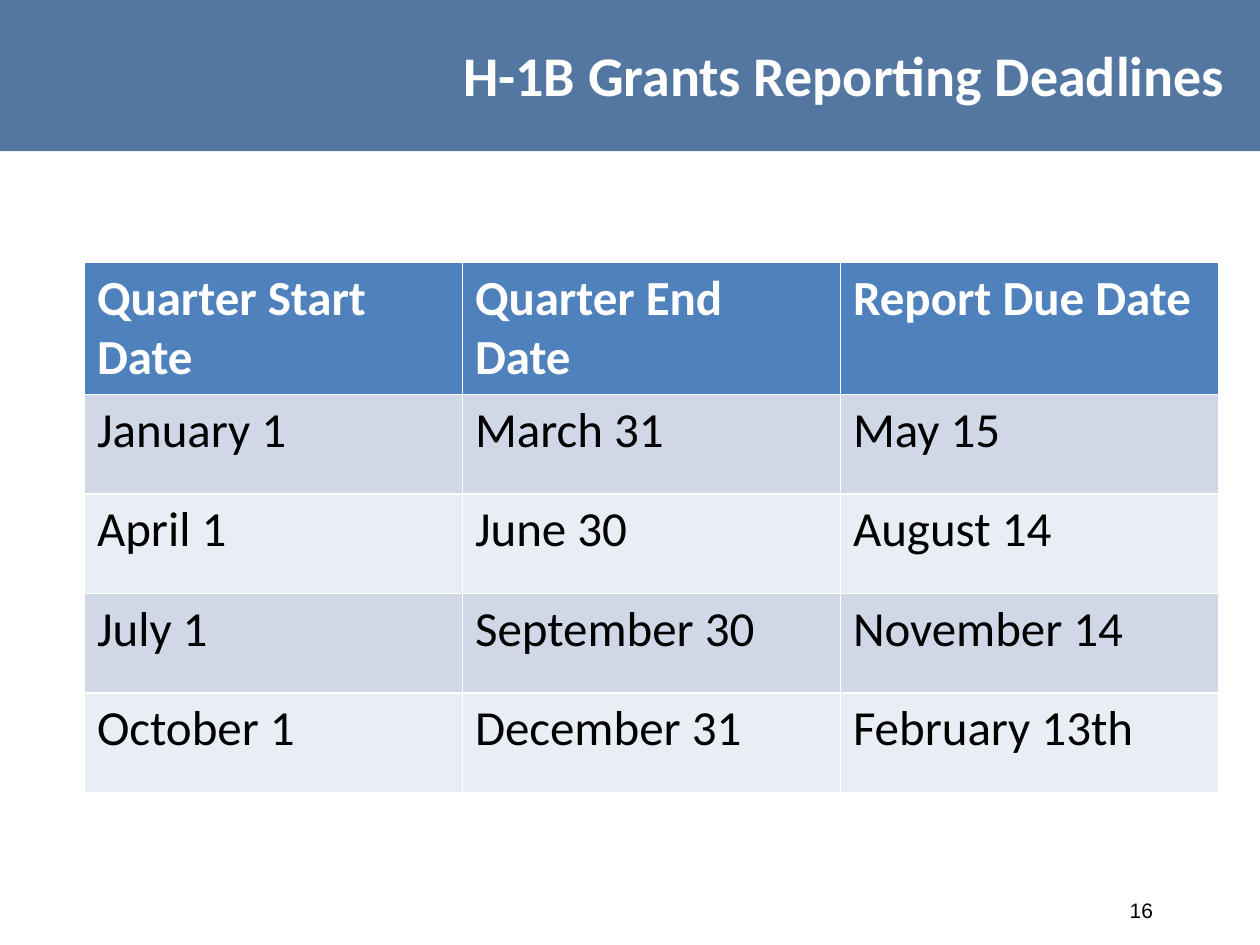
from typing import NamedTuple

from lxml.etree import SubElement
from pptx import Presentation
from pptx.dml.color import RGBColor
from pptx.enum.shapes import MSO_SHAPE
from pptx.enum.text import MSO_ANCHOR, MSO_AUTO_SIZE, PP_ALIGN
from pptx.oxml.ns import qn
from pptx.slide import Slide
from pptx.text.text import TextFrame
from pptx.util import Inches, Pt

WHITE = RGBColor(0xFF, 0xFF, 0xFF)
BLACK = RGBColor(0x00, 0x00, 0x00)
BAND_BLUE = RGBColor(0x37, 0x60, 0x92)
HEADER_BLUE = RGBColor(0x4F, 0x81, 0xBD)
ROW_DARK = RGBColor(0xD0, 0xD8, 0xE8)
ROW_LIGHT = RGBColor(0xE9, 0xED, 0xF4)


class Quarter(NamedTuple):
    start: str
    end: str
    due: str


class TextStyle(NamedTuple):
    size: int
    color: RGBColor
    bold: bool = False
    font: str = "Calibri"
    alignment: PP_ALIGN = PP_ALIGN.LEFT


TITLE_STYLE = TextStyle(32, WHITE, bold=True, alignment=PP_ALIGN.CENTER)
HEADER_STYLE = TextStyle(28, WHITE, bold=True)
BODY_STYLE = TextStyle(28, BLACK)
NUMBER_STYLE = TextStyle(12, BLACK, font="Arial", alignment=PP_ALIGN.RIGHT)

HEADINGS = Quarter("Quarter Start Date", "Quarter End Date", "Report Due Date")
QUARTERS = [
    Quarter("January 1", "March 31", "May 15"),
    Quarter("April 1", "June 30", "August 14"),
    Quarter("July 1", "September 30", "November 14"),
    Quarter("October 1", "December 31", "February 13th"),
]


def write_text(text_frame: TextFrame, text: str, style: TextStyle) -> None:
    text_frame.text = text
    paragraph = text_frame.paragraphs[0]
    paragraph.alignment = style.alignment
    paragraph.font.name = style.font
    paragraph.font.size = Pt(style.size)
    paragraph.font.bold = style.bold
    paragraph.font.color.rgb = style.color


def add_title_band(slide: Slide) -> None:
    band = slide.shapes.add_shape(
        MSO_SHAPE.RECTANGLE, Inches(-0.01), Inches(0), Inches(10.01), Inches(1.2)
    )
    band.shadow.inherit = False
    band.fill.solid()
    band.fill.fore_color.rgb = BAND_BLUE
    band.line.fill.background()
    color = band.fill._xPr.find(qn("a:solidFill"))[0]
    SubElement(color, qn("a:alpha")).set("val", "85000")
    slide.shapes._spTree.insert(2, band._element)


def place_title(slide: Slide, text: str) -> None:
    title = slide.shapes.title
    title.left, title.top = Inches(3.5), Inches(0)
    title.width, title.height = Inches(6.5), Inches(1.17)
    title.text_frame.auto_size = MSO_AUTO_SIZE.NONE
    title.text_frame.vertical_anchor = MSO_ANCHOR.MIDDLE
    write_text(title.text_frame, text, TITLE_STYLE)


def add_deadline_table(slide: Slide) -> None:
    rows = [HEADINGS, *QUARTERS]
    row_height = Inches(0.79)
    table = slide.shapes.add_table(
        len(rows), len(HEADINGS), Inches(0.67), Inches(2.08), Inches(9), row_height * len(rows)
    ).table
    for row_index, values in enumerate(rows):
        table.rows[row_index].height = row_height
        if row_index == 0:
            fill, style = HEADER_BLUE, HEADER_STYLE
        else:
            fill, style = (ROW_DARK if row_index % 2 else ROW_LIGHT), BODY_STYLE
        for column_index, value in enumerate(values):
            cell = table.cell(row_index, column_index)
            cell.fill.solid()
            cell.fill.fore_color.rgb = fill
            write_text(cell.text_frame, value, style)


def add_slide_number(slide: Slide, number: str) -> None:
    box = slide.shapes.add_textbox(Inches(6.92), Inches(7.02), Inches(2.33), Inches(0.4))
    box.text_frame.word_wrap = True
    box.text_frame.vertical_anchor = MSO_ANCHOR.MIDDLE
    write_text(box.text_frame, number, NUMBER_STYLE)


def main() -> None:
    presentation = Presentation()
    presentation.slide_width = Inches(10)
    presentation.slide_height = Inches(7.5)
    slide = presentation.slides.add_slide(presentation.slide_layouts[5])
    add_title_band(slide)
    place_title(slide, "H-1B Grants Reporting Deadlines ")
    add_deadline_table(slide)
    add_slide_number(slide, "16")
    presentation.save("out.pptx")


if __name__ == "__main__":
    main()
